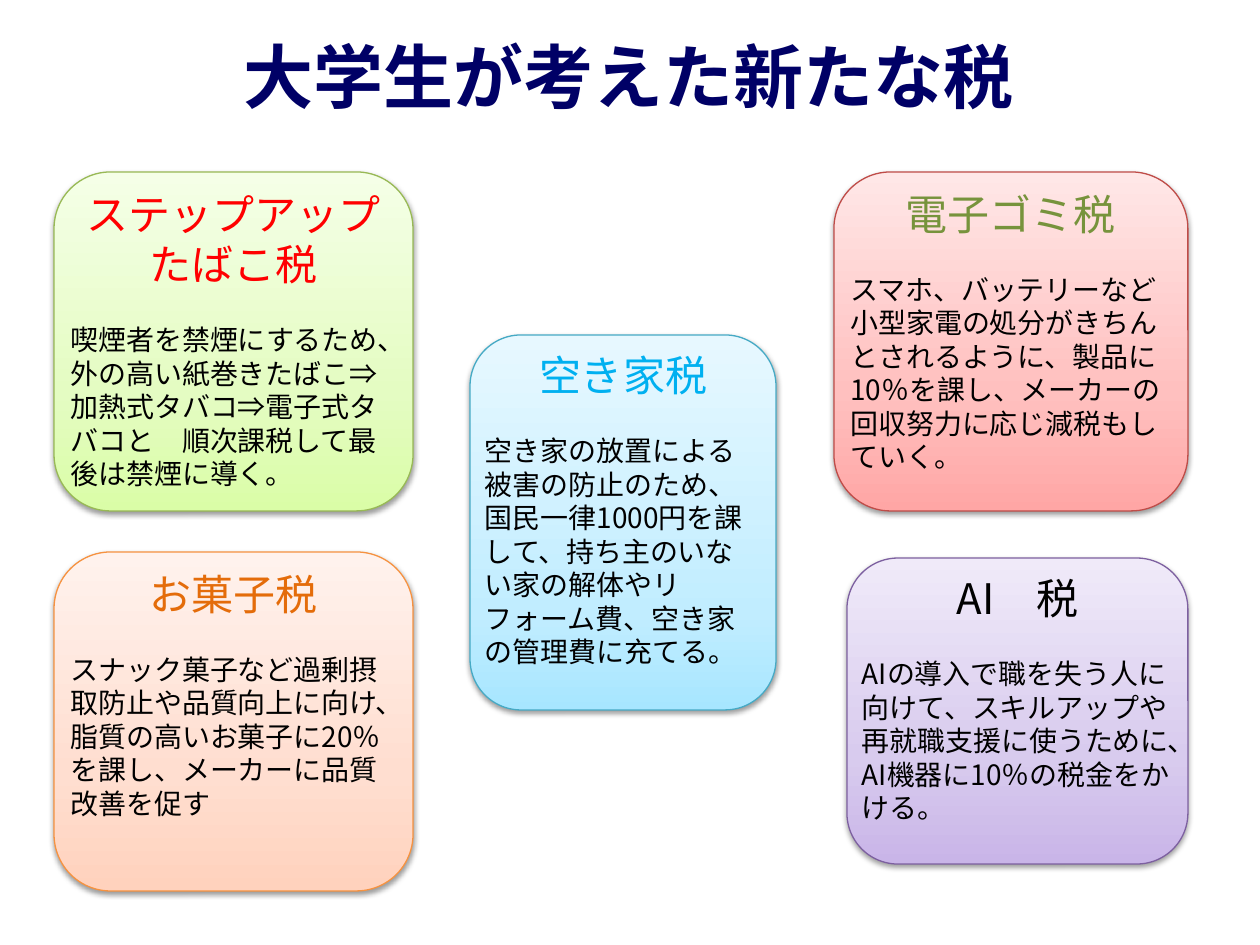
from dataclasses import dataclass

import pptx
import pptx.dml.color
import pptx.enum.shapes
import pptx.enum.text
import pptx.oxml
import pptx.oxml.ns
import pptx.util

PX = 914400 / 126
FONT = "Noto Sans CJK JP"
ALIGN = pptx.enum.text.PP_ALIGN
ANCHOR = pptx.enum.text.MSO_ANCHOR
qn = pptx.oxml.ns.qn
NS = pptx.oxml.ns.nsdecls("a")


@dataclass
class Card:
    box: tuple[int, int, int, int]
    stops: list[tuple[int, str]]
    line: str
    heading: str
    heading_color: str
    body: str


CARDS = [
    Card((54, 172, 359, 339), [(0, "DAFDA7"), (35, "E4FCC2"), (100, "F5FFE7")], "98B955",
         "ステップアップたばこ税", "FF0000",
         "喫煙者を禁煙にするため、外の高い紙巻きたばこ⇒加熱式タバコ⇒電子式タバコと　順次課税して最後は禁煙に導く。"),
    Card((470, 335, 306, 375), [(0, "A7E6FF"), (26, "C1EDFF"), (100, "E7F8FF")], "46AAC5",
         "空き家税", "00B0F0",
         "空き家の放置による被害の防止のため、国民一律1000円を課して、持ち主のいない家の解体やリフォーム費、空き家の管理費に充てる。"),
    Card((54, 552, 359, 339), [(0, "FFD2BD"), (35, "FFDED0"), (100, "FFF2ED")], "F69240",
         "お菓子税", "E46C0A",
         "スナック菓子など過剰摂取防止や品質向上に向け、脂質の高いお菓子に20％を課し、メーカーに品質改善を促す"),
    Card((834, 172, 354, 339), [(0, "FFA6A5"), (35, "FFC0BF"), (100, "FFE7E7")], "BF4C48",
         "電子ゴミ税", "77933C",
         "スマホ、バッテリーなど小型家電の処分がきちんとされるように、製品に10％を課し、メーカーの回収努力に応じ減税もしていく。"),
    Card((847, 558, 341, 306), [(0, "C9B5E8"), (35, "D8CBEE"), (100, "F0EAF9")], "7D60A0",
         "AI　税", "000000",
         "AIの導入で職を失う人に向けて、スキルアップや再就職支援に使うために、AI機器に10％の税金をかける。"),
]


def px(*values: int) -> list[int]:
    return [round(v * PX) for v in values]


def rgb(color: str) -> pptx.dml.color.RGBColor:
    return pptx.dml.color.RGBColor.from_string(color)


def write(p, text: str, *, size: int, color: str = "000000", bold: bool = False,
          align=ALIGN.LEFT, before: int = 0) -> None:
    p.alignment = align
    p.space_before = pptx.util.Pt(before)
    r = p.add_run()
    r.text = text
    r.font.name = FONT
    r.font.size = pptx.util.Pt(size)
    r.font.bold = bold
    r.font.color.rgb = rgb(color)
    ea = pptx.oxml.parse_xml(f'<a:ea {NS} typeface="{FONT}"/>')
    r.font._element.find(qn("a:latin")).addnext(ea)


def set_gradient(sp, stops: list[tuple[int, str]]) -> None:
    sp.fill.gradient()
    sp.fill.gradient_angle = 90
    gs = "".join(f'<a:gs pos="{pos * 1000}"><a:srgbClr val="{color}"/></a:gs>'
                 for pos, color in stops)
    grad = sp._element.spPr.find(qn("a:gradFill"))
    grad.replace(grad.find(qn("a:gsLst")),
                 pptx.oxml.parse_xml(f"<a:gsLst {NS}>{gs}</a:gsLst>"))


def set_shadow(sp) -> None:
    sp.shadow.inherit = False
    blur, dist = pptx.util.Pt(3.1), pptx.util.Pt(1.6)
    sp._element.spPr.find(qn("a:effectLst")).append(pptx.oxml.parse_xml(
        f'<a:outerShdw {NS} blurRad="{blur}" dist="{dist}" dir="5400000" rotWithShape="0">'
        '<a:srgbClr val="000000"><a:alpha val="38000"/></a:srgbClr></a:outerShdw>'))


def draw_card(s, card: Card) -> None:
    sp = s.shapes.add_shape(pptx.enum.shapes.MSO_SHAPE.ROUNDED_RECTANGLE, *px(*card.box))
    set_gradient(sp, card.stops)
    sp.line.color.rgb = rgb(card.line)
    sp.line.width = pptx.util.Pt(0.75)
    set_shadow(sp)
    tf = sp.text_frame
    tf.word_wrap = True
    tf.vertical_anchor = ANCHOR.TOP
    tf.margin_left = tf.margin_right = tf.margin_top = tf.margin_bottom = 0
    write(tf.paragraphs[0], card.heading, size=24, color=card.heading_color, align=ALIGN.CENTER)
    write(tf.add_paragraph(), card.body, size=16, before=19)


def draw_title(s, text: str) -> None:
    tf = s.shapes.add_textbox(*px(1, 26, 1255, 100)).text_frame
    tf.word_wrap = True
    tf.vertical_anchor = ANCHOR.MIDDLE
    write(tf.paragraphs[0], text, size=40, color="000066", bold=True, align=ALIGN.CENTER)


def main() -> None:
    prs = pptx.Presentation()
    prs.slide_width, prs.slide_height = px(1260, 945)
    s = prs.slides.add_slide(prs.slide_layouts[6])
    draw_title(s, "大学生が考えた新たな税")
    for card in CARDS:
        draw_card(s, card)
    prs.save("out.pptx")


if __name__ == "__main__":
    main()
